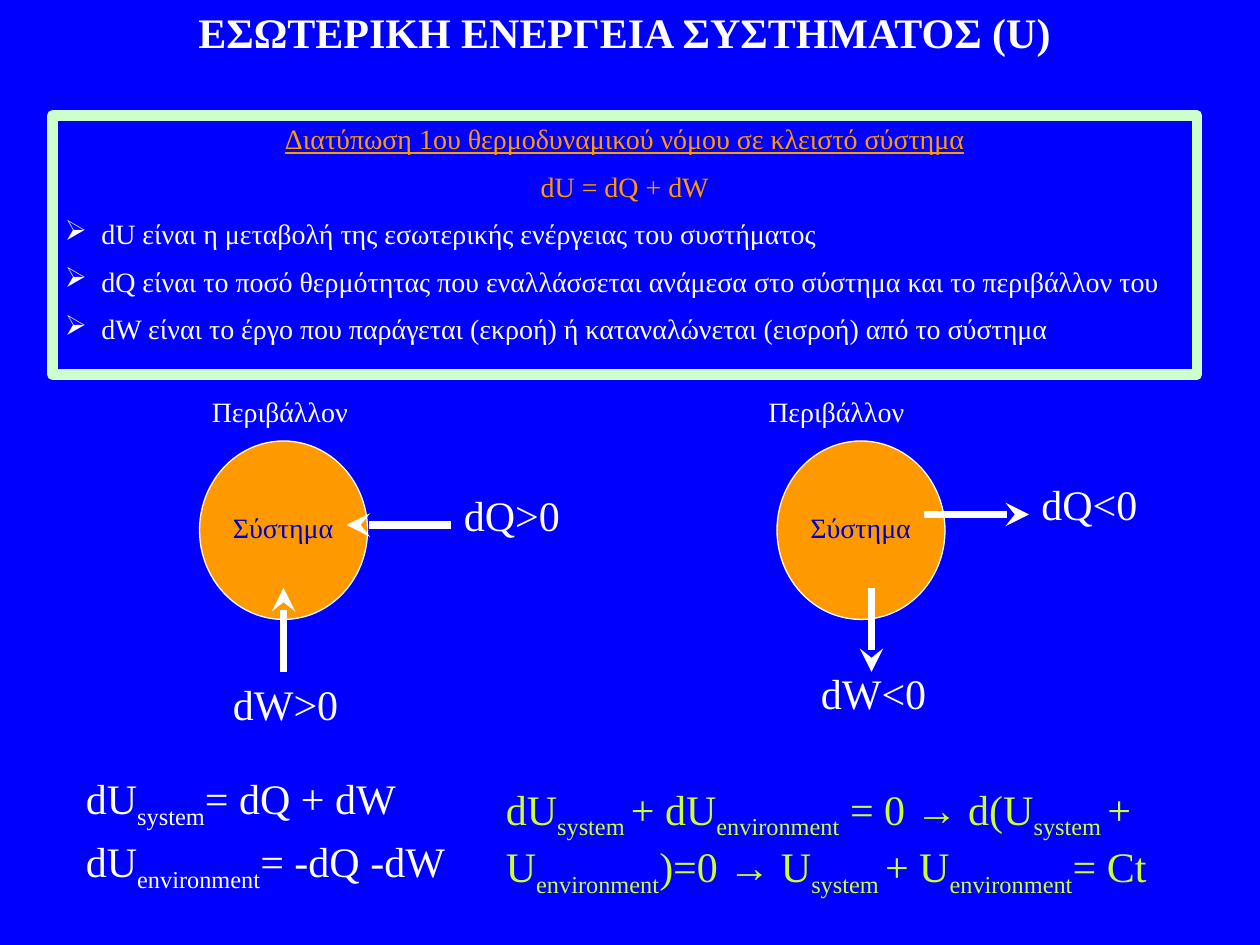
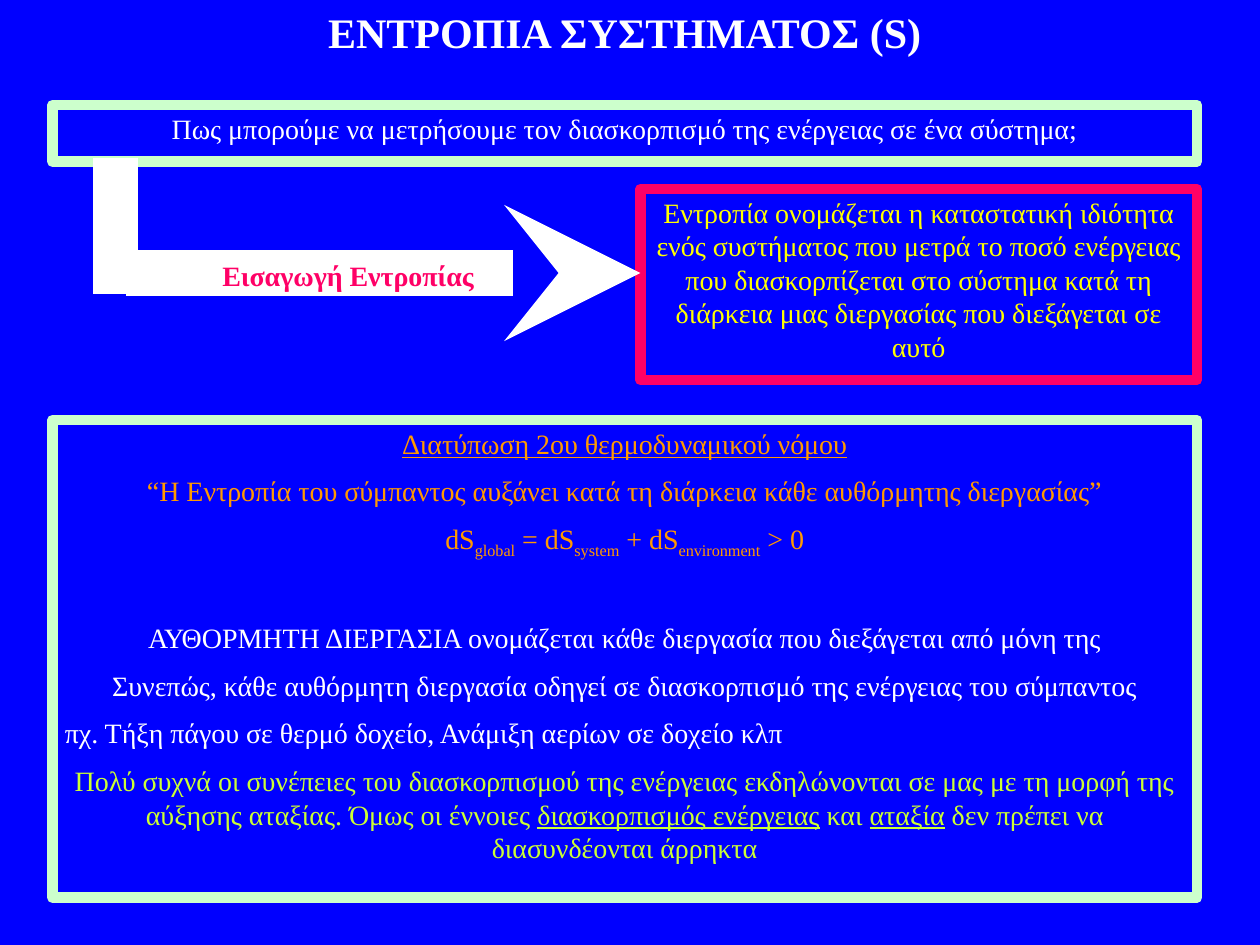
import pptx
import pptx.util
import pptx.dml.color
import pptx.enum.shapes
import pptx.enum.text
import pptx.oxml.ns
from lxml import etree

FONT = "Times New Roman"
BLUE, NAVY, WHITE = "0000FF", "0000CC", "FFFFFF"
MINT, ORANGE, LIME, PINK, YELLOW = "CCFFCC", "FF9900", "CCFF33", "FF0066", "FFFF00"
BODY, LARGE = 16, 24          # text sizes in points
UNIT = pptx.util.Inches(1) / 12   # the slide is a grid of 120 columns by 90 rows
LINE_ROWS = {BODY: 4.4, LARGE: 6}  # height of a one-line text
BULLET_INDENT = pptx.util.Inches(0.29)
WIDE_LEFT, WIDE_WIDTH = 5, 109

# In all texts, *...* is underlined and _..._ is subscript.
# A paragraph is (text, colour, layout), layout being "center", "left" or "bullet".
ENERGY_TITLE = "ΕΣΩΤΕΡΙΚΗ ΕΝΕΡΓΕΙΑ ΣΥΣΤΗΜΑΤΟΣ (U)"
FIRST_LAW = [
    ("*Διατύπωση 1ου θερμοδυναμικού νόμου σε κλειστό σύστημα*", ORANGE, "center"),
    ("dU = dQ + dW", ORANGE, "center"),
    ("dU είναι η μεταβολή της εσωτερικής ενέργειας του συστήματος", WHITE, "bullet"),
    ("dQ είναι το ποσό θερμότητας που εναλλάσσεται ανάμεσα στο σύστημα και το "
     "περιβάλλον του", WHITE, "bullet"),
    ("dW είναι το έργο που παράγεται (εκροή) ή καταναλώνεται (εισροή) από το "
     "σύστημα", WHITE, "bullet"),
]
# Columns are counted from the left edge of the system's circle.
SYSTEMS = [
    dict(left=19, sign=">0", environment=0, heat_row=50, work_column=8,
         work_label=(2, 64), inward=True),
    dict(left=74, sign="<0", environment=-2, heat_row=49, work_column=9,
         work_label=(3, 63), inward=False),
]
BALANCES = [  # text, colour, left, top, width, height
    ("dU_system_= dQ + dW", WHITE, 7, 73, 35, 6),
    ("dU_environment_= -dQ -dW", WHITE, 7, 79, 41, 6),
    ("dU_system _+ dU_environment_ = 0 → d(U_system _+ U_environment_)=0 → "
     "U_system _+ U_environment_= Ct", LIME, 47, 74, 73, 10.8),
]

ENTROPY_TITLE = "ΕΝΤΡΟΠΙΑ ΣΥΣΤΗΜΑΤΟΣ (S)"
QUESTION = [("Πως μπορούμε να μετρήσουμε τον διασκορπισμό της ενέργειας σε ένα σύστημα;",
             WHITE, "center")]
DEFINITION = [("Εντροπία ονομάζεται η καταστατική ιδιότητα ενός συστήματος που μετρά το "
               "ποσό ενέργειας που διασκορπίζεται στο σύστημα κατά τη διάρκεια μιας "
               "διεργασίας που διεξάγεται σε αυτό", YELLOW, "center")]
INTRODUCTION = "Εισαγωγή Εντροπίας"
SECOND_LAW = [
    ("*Διατύπωση 2ου θερμοδυναμικού νόμου*", ORANGE, "center"),
    ("“Η Εντροπία του σύμπαντος αυξάνει κατά τη διάρκεια κάθε αυθόρμητης διεργασίας”",
     ORANGE, "center"),
    ("dS_global_ = dS_system_ + dS_environment_ > 0", ORANGE, "center"),
    ("ΑΥΘΟΡΜΗΤΗ ΔΙΕΡΓΑΣΙΑ ονομάζεται κάθε διεργασία που διεξάγεται από μόνη της",
     WHITE, "center"),
    ("Συνεπώς, κάθε αυθόρμητη διεργασία οδηγεί σε διασκορπισμό της ενέργειας του "
     "σύμπαντος", WHITE, "center"),
    ("πχ. Τήξη πάγου σε θερμό δοχείο, Ανάμιξη αερίων σε δοχείο κλπ", WHITE, "left"),
    ("Πολύ συχνά οι συνέπειες του διασκορπισμού της ενέργειας εκδηλώνονται σε μας με τη "
     "μορφή της αύξησης αταξίας. Όμως οι έννοιες *διασκορπισμός ενέργειας* και *αταξία* "
     "δεν πρέπει να διασυνδέονται άρρηκτα", LIME, "center"),
]
EXPLANATION_START = 3   # paragraph of the second law set apart by a wide gap
EXPLANATION_GAP = 35


def rgb(color):
    return pptx.dml.color.RGBColor.from_string(color)


def grid(*cells):
    return [pptx.util.Emu(round(cell * UNIT)) for cell in cells]


def write_runs(paragraph, text, color, size, bold):
    for i, part in enumerate(text.split("*")):
        for j, piece in enumerate(part.split("_")):
            if not piece:
                continue
            run = paragraph.add_run()
            run.text = piece
            run.font.name, run.font.size = FONT, pptx.util.Pt(size)
            run.font.color.rgb = rgb(color)
            run.font.bold = bold
            if i % 2:
                run.font.underline = True
            if j % 2:
                run._r.get_or_add_rPr().set("baseline", "-25000")


def write(shape, paragraphs, size=BODY, bold=False, gaps=None):
    """Fill a shape; gaps maps a paragraph's index to its own space before."""
    frame = shape.text_frame
    frame.word_wrap = True
    frame.vertical_anchor = pptx.enum.text.MSO_ANCHOR.TOP
    align = pptx.enum.text.PP_ALIGN
    for index, (text, color, layout) in enumerate(paragraphs):
        paragraph = frame.add_paragraph() if index else frame.paragraphs[0]
        paragraph.alignment = align.CENTER if layout == "center" else align.LEFT
        if index:
            paragraph.space_before = pptx.util.Pt((gaps or {}).get(index, size / 2))
        if layout == "bullet":
            properties = paragraph._p.get_or_add_pPr()
            properties.set("marL", str(BULLET_INDENT))
            properties.set("indent", str(-BULLET_INDENT))
            etree.SubElement(properties, pptx.oxml.ns.qn("a:buChar")).set("char", "➢")
        write_runs(paragraph, text, color, size, bold)


def add_label(slide, text, color, left, top, width, size=BODY, bold=False,
              layout="left", height=None):
    box = slide.shapes.add_textbox(*grid(left, top, width, height or LINE_ROWS[size]))
    write(box, [(text, color, layout)], size, bold)


def add_outlined(slide, kind, area, color, points, fill=None):
    shape = slide.shapes.add_shape(kind, *grid(*area))
    shape.shadow.inherit = False
    if fill:
        shape.fill.solid()
        shape.fill.fore_color.rgb = rgb(fill)
    else:
        shape.fill.background()
    shape.line.color.rgb = rgb(color)
    shape.line.width = pptx.util.Pt(points)
    return shape


def add_panel(slide, paragraphs, area, color=MINT, gaps=None):
    panel = add_outlined(slide, pptx.enum.shapes.MSO_SHAPE.RECTANGLE, area, color, 6)
    write(panel, paragraphs, gaps=gaps)


def add_line(slide, start, end, points=4.5, arrow=True):
    line = slide.shapes.add_connector(pptx.enum.shapes.MSO_CONNECTOR.STRAIGHT,
                                      *grid(*start, *end))
    line.line.color.rgb = rgb(WHITE)
    line.line.width = pptx.util.Pt(points)
    if arrow:
        etree.SubElement(line.line._get_or_add_ln(),
                         pptx.oxml.ns.qn("a:tailEnd")).set("type", "stealth")
    etree.SubElement(line._element.spPr, pptx.oxml.ns.qn("a:effectLst"))


def add_titled_slide(deck, title):
    slide = deck.slides.add_slide(deck.slide_layouts[6])
    slide.background.fill.solid()
    slide.background.fill.fore_color.rgb = rgb(BLUE)
    add_label(slide, title, WHITE, 12, 0, 95, LARGE, bold=True, layout="center")
    return slide


def add_system(slide, left, sign, environment, heat_row, work_column, work_label, inward):
    """Draw a system's circle with its heat and work arrows, inward or outward."""
    add_outlined(slide, pptx.enum.shapes.MSO_SHAPE.OVAL, (left, 42, 16, 17),
                 WHITE, 0.75, ORANGE)
    add_label(slide, "Σύστημα", NAVY, left + 2, 48, 14)
    add_label(slide, "Περιβάλλον", WHITE, left + environment, 37, 18)
    heat = [(left + 14, heat_row), (left + 24, heat_row)]
    work = [(left + work_column, 56), (left + work_column, 64)]
    for inner, outer in (heat, work):
        add_line(slide, *((outer, inner) if inward else (inner, outer)))
    add_label(slide, "dQ" + sign, WHITE, left + 24, heat_row - 4, 12, LARGE)
    column, row = work_label
    add_label(slide, "dW" + sign, WHITE, left + column, row, 16, LARGE)


def build_energy(deck):
    slide = add_titled_slide(deck, ENERGY_TITLE)
    add_panel(slide, FIRST_LAW, (WIDE_LEFT, 11, WIDE_WIDTH, 24.7))
    for system in SYSTEMS:
        add_system(slide, **system)
    for text, color, left, top, width, height in BALANCES:
        add_label(slide, text, color, left, top, width, LARGE, height=height)


def build_entropy(deck):
    slide = add_titled_slide(deck, ENTROPY_TITLE)
    add_panel(slide, QUESTION, (WIDE_LEFT, 10, WIDE_WIDTH, 5.4))
    add_panel(slide, DEFINITION, (61, 18, 53, 18.2), PINK)
    add_line(slide, (11, 15), (11, 28), 26, arrow=False)
    add_line(slide, (12, 26), (61, 26), 26)
    add_label(slide, INTRODUCTION, PINK, 20, 24, 31, bold=True)
    add_panel(slide, SECOND_LAW, (WIDE_LEFT, 40, WIDE_WIDTH, 45.5),
              gaps={EXPLANATION_START: EXPLANATION_GAP})


def main():
    deck = pptx.Presentation()
    deck.slide_width, deck.slide_height = grid(120, 90)
    build_energy(deck)
    build_entropy(deck)
    deck.save("out.pptx")


if __name__ == "__main__":
    main()
